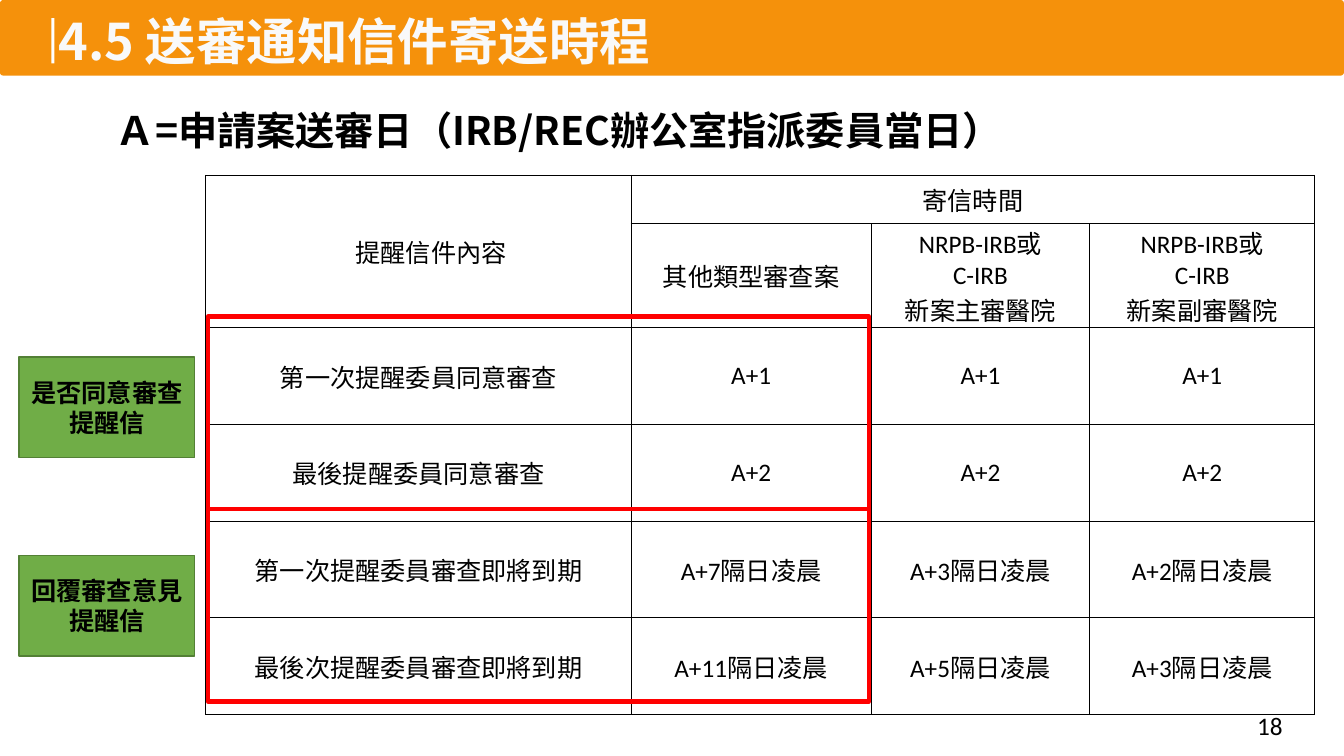
import pptx
import pptx.util
import pptx.dml.color
import pptx.enum.shapes
import pptx.enum.text
import pptx.oxml.ns
from lxml import etree

RGBColor = pptx.dml.color.RGBColor
Inches = pptx.util.Inches
Pt = pptx.util.Pt
Shape = pptx.enum.shapes.MSO_SHAPE
Align = pptx.enum.text.PP_ALIGN
Anchor = pptx.enum.text.MSO_ANCHOR
qn = pptx.oxml.ns.qn

ORANGE = RGBColor(0xF5, 0x91, 0x0B)
WHITE = RGBColor(0xFF, 0xFF, 0xFF)
TITLE_WHITE = RGBColor(0xF9, 0xF9, 0xF9)
BLACK = RGBColor(0, 0, 0)
RED = RGBColor(0xFF, 0, 0)
GREEN = RGBColor(0x70, 0xAD, 0x47)
DARK_GREEN = RGBColor(0x53, 0x80, 0x35)
LATIN, CHINESE = "Calibri", "Noto Sans CJK SC"

COLUMNS = [4.22, 2.38, 2.17, 2.23]
# The second heading row holds three lines of text
ROWS = [0.48, 1.03] + [0.96] * 4
# Each item of a cell's list is a paragraph
HEADINGS = [["其他類型審查案"], ["NRPB-IRB或\nC-IRB\n新案主審醫院"],
            ["NRPB-IRB或\nC-IRB", "新案副審醫院"]]
REMINDERS = [
    ["第一次提醒委員同意審查", "A+1", "A+1", "A+1"],
    ["最後提醒委員同意審查", "A+2", "A+2", "A+2"],
    ["第一次提醒委員審查即將到期", "A+7隔日凌晨", "A+3隔日凌晨", "A+2隔日凌晨"],
    ["最後次提醒委員審查即將到期", "A+11隔日凌晨", "A+5隔日凌晨", "A+3隔日凌晨"],
]
LABELS = [["是否同意審查", "提醒信"], ["回覆審查意見提醒信"]]


def write(frame, lines, size=18, font=LATIN, color=BLACK, bold=False,
          align=None, spacing=None):
    for index, line in enumerate(lines):
        para = frame.add_paragraph() if index else frame.paragraphs[0]
        para.text = line
        para.alignment = align
        para.line_spacing = spacing
        for span in para.runs:
            span.font.size = Pt(size)
            span.font.bold = bold
            span.font.color.rgb = color
            span.font.name = font
            if font == CHINESE:
                east = etree.SubElement(span.font._element, qn("a:ea"))
                east.set("typeface", font)


def add_box(page, kind, left, top, width, height, fill=None, line=None, weight=1):
    box = page.shapes.add_shape(kind, Inches(left), Inches(top), Inches(width), Inches(height))
    box.shadow.inherit = False
    if fill is None:
        box.fill.background()
    else:
        box.fill.solid()
        box.fill.fore_color.rgb = fill
    if line is None:
        box.line.fill.background()
    else:
        box.line.color.rgb = line
        box.line.width = Pt(weight)
    if kind == Shape.ROUNDED_RECTANGLE:
        box.adjustments[0] = 0.044
    return box


def add_text(page, left, top, width, height, text, inset=0, **style):
    box = page.shapes.add_textbox(Inches(left), Inches(top), Inches(width), Inches(height))
    frame = box.text_frame
    frame.word_wrap = True
    frame.vertical_anchor = Anchor.MIDDLE
    frame.margin_left = frame.margin_right = Inches(inset)
    frame.margin_top = frame.margin_bottom = 0
    write(frame, [text], **style)


def add_header(page, left, top, width, height):
    add_box(page, Shape.ROUNDED_RECTANGLE, left, top, width, height, fill=ORANGE)
    add_box(page, Shape.ROUNDED_RECTANGLE, left + 0.51, top + 0.18, 0.03, 0.6 * height, fill=WHITE)
    add_text(page, left + 0.58, top + 0.16, width - 0.58, 0.75 * height,
             "4.5 送審通知信件寄送時程", size=36, font=CHINESE,
             color=TITLE_WHITE, bold=True, spacing=0.9)


def add_borders(cell):
    properties = cell._tc.get_or_add_tcPr()
    for position, side in enumerate(("lnL", "lnR", "lnT", "lnB")):
        border = etree.Element(qn("a:" + side), w=str(Pt(1)))
        fill = etree.SubElement(border, qn("a:solidFill"))
        etree.SubElement(fill, qn("a:srgbClr"), val=str(BLACK))
        properties.insert(position, border)


def add_schedule(page, left, top):
    table = page.shapes.add_table(
        len(ROWS), len(COLUMNS), Inches(left), Inches(top),
        Inches(sum(COLUMNS)), Inches(sum(ROWS))).table
    for column, width in zip(table.columns, COLUMNS):
        column.width = Inches(width)
    for row, height in zip(table.rows, ROWS):
        row.height = Inches(height)
    table.cell(0, 0).merge(table.cell(1, 0))
    table.cell(0, 1).merge(table.cell(0, 3))
    grid = [[["　提醒信件內容"], ["寄信時間"], [""], [""]], [[""]] + HEADINGS]
    grid += [[[text] for text in reminder] for reminder in REMINDERS]
    for row, contents in zip(table.rows, grid):
        for cell, lines in zip(row.cells, contents):
            cell.margin_left = cell.margin_right = 0
            cell.margin_top = cell.margin_bottom = 0
            cell.vertical_anchor = Anchor.MIDDLE
            cell.fill.solid()
            cell.fill.fore_color.rgb = WHITE
            add_borders(cell)
            if not cell.is_spanned:
                write(cell.text_frame, lines, align=Align.CENTER)


def add_groups(page, left, top, width, height):
    # Red frames around pairs of reminders
    for index in range(len(LABELS)):
        add_box(page, Shape.RECTANGLE, left, top + index * height, width, height,
                line=RED, weight=3)
    # Green labels beside them
    for index, lines in enumerate(LABELS):
        label = add_box(page, Shape.RECTANGLE, left - 1.87, top + 0.4 + index * 1.97,
                        1.74, 1, fill=GREEN, line=DARK_GREEN)
        label.text_frame.word_wrap = True
        label.text_frame.vertical_anchor = Anchor.MIDDLE
        write(label.text_frame, lines, font=CHINESE, bold=True, align=Align.CENTER)


def main():
    deck = pptx.Presentation()
    deck.slide_width, deck.slide_height = Inches(13.33), Inches(7.5)
    page = deck.slides.add_slide(deck.slide_layouts[6])
    add_text(page, 12.37, 7, 0.87, 0.4, "18", inset=0.1)
    add_header(page, 0, 0, 13.33, 0.75)
    add_text(page, 1.15, 0.94, 11, 0.75, "Ａ=申請案送審日（IRB/REC辦公室指派委員當日）",
             size=28, font=CHINESE, bold=True, spacing=0.9)
    add_schedule(page, 2.04, 1.74)
    add_groups(page, 2.06, 3.14, 6.56, 1.91)
    deck.save("out.pptx")


if __name__ == "__main__":
    main()
